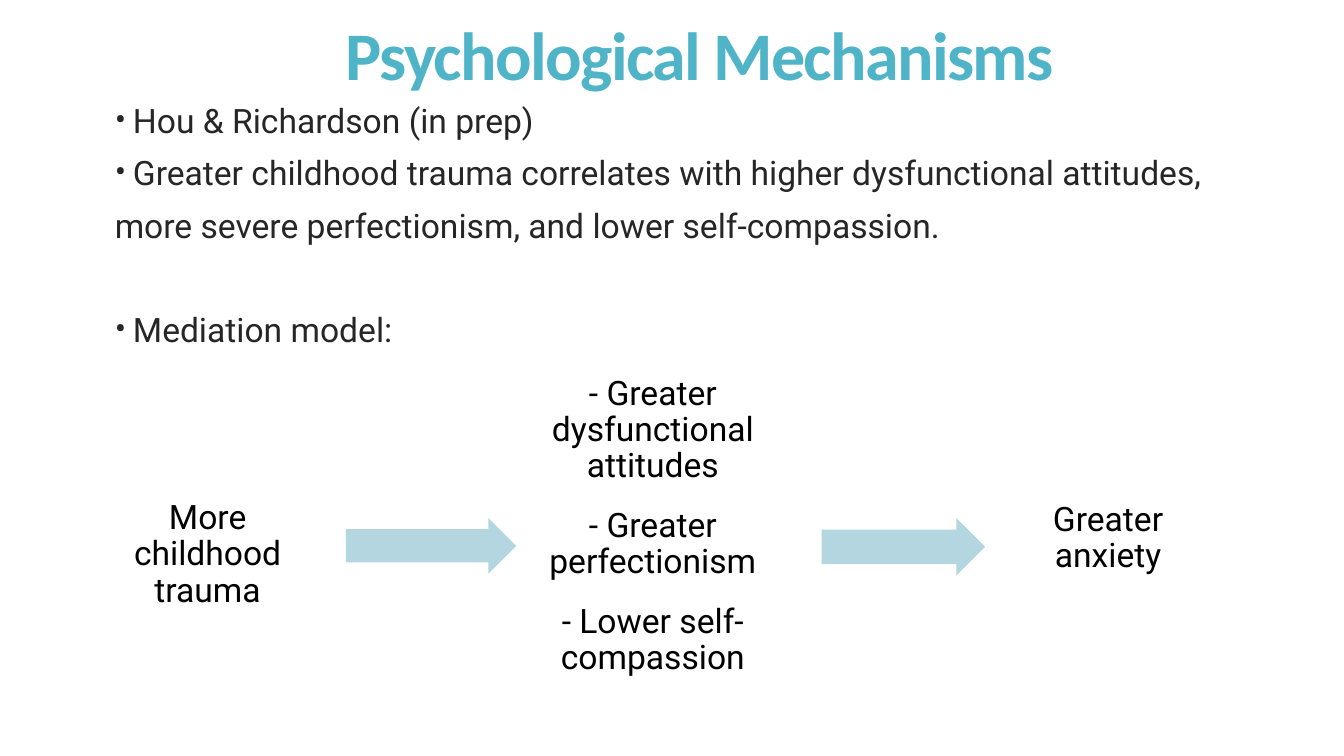
from dataclasses import dataclass

from lxml.etree import SubElement
from pptx import Presentation
from pptx.dml.color import RGBColor
from pptx.enum.shapes import MSO_SHAPE
from pptx.enum.text import MSO_ANCHOR, MSO_AUTO_SIZE, PP_ALIGN
from pptx.oxml.ns import qn
from pptx.util import Inches, Pt


@dataclass(frozen=True)
class Theme:
    accent: RGBColor = RGBColor(0x50, 0xB4, 0xC8)
    arrow: RGBColor = RGBColor(0xB3, 0xD6, 0xE0)
    body: RGBColor = RGBColor(0x26, 0x26, 0x26)
    label: RGBColor = RGBColor(0, 0, 0)
    title_font: str = "Calibri"
    text_font: str = "Roboto"
    title_size: Pt = Pt(48.6)
    text_size: Pt = Pt(24)


THEME = Theme()

FINDINGS = [
    ("Hou & Richardson (in prep)", True, 0),
    ("Greater childhood trauma correlates with higher dysfunctional attitudes,", True, 13),
    ("more severe perfectionism, and lower self-compassion.", False, 13),
    ("Mediation model:", True, 50),
]

STAGES = [
    ((1.08, 4.91, 1.96, 1.19), ["More childhood trauma"]),
    ((4.92, 4.19, 3.11, 2.07), [
        "- Greater dysfunctional attitudes",
        "- Greater perfectionism",
        "- Lower self-compassion",
    ]),
    ((9.9, 4.98, 2.18, 0.72), ["Greater anxiety"]),
]

ARROWS = [(3.43, 5.14, 1.69, 0.55), (8.15, 5.14, 1.62, 0.57)]


def set_attrs(obj, values):
    for name, value in values.items():
        setattr(obj, name, value)


def to_inches(box):
    return [Inches(v) for v in box]


def write_paragraph(p, text, color, **para_format):
    set_attrs(p, para_format)
    r = p.add_run()
    r.text = text
    set_attrs(r.font, {"name": THEME.text_font, "size": THEME.text_size})
    r.font.color.rgb = color


def paragraphs(tf, count):
    return [tf.paragraphs[0]] + [tf.add_paragraph() for _ in range(count - 1)]


def add_bullet(p):
    pPr = p._p.get_or_add_pPr()
    indent = Inches(0.18)
    pPr.set("marL", str(indent))
    pPr.set("indent", str(-indent))
    SubElement(pPr, qn("a:buFont")).set("typeface", THEME.text_font)
    SubElement(pPr, qn("a:buChar")).set("char", "•")


def format_title(sp, text, box):
    set_attrs(sp, dict(zip(("left", "top", "width", "height"), to_inches(box))))
    tf = sp.text_frame
    tf.text = text
    set_attrs(tf, {"auto_size": MSO_AUTO_SIZE.NONE, "vertical_anchor": MSO_ANCHOR.MIDDLE})
    p = tf.paragraphs[0]
    set_attrs(p, {"alignment": PP_ALIGN.CENTER, "line_spacing": 0.85})
    r = p.runs[0]
    set_attrs(r.font, {"name": THEME.title_font, "size": THEME.title_size, "bold": True})
    r.font.color.rgb = THEME.accent
    r._r.get_or_add_rPr().set("spc", "-120")


def add_findings(s, box):
    tf = s.shapes.add_textbox(*to_inches(box)).text_frame
    tf.word_wrap = True
    for p, (text, bulleted, before) in zip(paragraphs(tf, len(FINDINGS)), FINDINGS):
        write_paragraph(p, text, THEME.body, line_spacing=0.85, space_before=Pt(before))
        if bulleted:
            add_bullet(p)


def add_stage(s, box, lines):
    tf = s.shapes.add_textbox(*to_inches(box)).text_frame
    set_attrs(tf, {"word_wrap": True, "vertical_anchor": MSO_ANCHOR.MIDDLE})
    sides = ("left", "top", "right", "bottom")
    set_attrs(tf, {f"margin_{side}": Inches(0.17) for side in sides})
    for p, text in zip(paragraphs(tf, len(lines)), lines):
        write_paragraph(p, text, THEME.label, alignment=PP_ALIGN.CENTER,
                        line_spacing=0.9, space_after=Pt(16.8))


def add_arrow(s, box):
    sp = s.shapes.add_shape(MSO_SHAPE.RIGHT_ARROW, *to_inches(box))
    sp.adjustments[0] = 0.6
    sp.adjustments[1] = 0.5
    sp.shadow.inherit = False
    sp.fill.solid()
    sp.fill.fore_color.rgb = THEME.arrow
    sp.line.fill.background()


def main():
    prs = Presentation()
    set_attrs(prs, {"slide_width": Inches(13.33), "slide_height": Inches(7.5)})
    s = prs.slides.add_slide(prs.slide_layouts[5])
    format_title(s.shapes.title, "Psychological Mechanisms", (1.23, 0.44, 11.42, 0.3))
    add_findings(s, (1.04, 1, 11.34, 6.09))
    for box, lines in STAGES:
        add_stage(s, box, lines)
    for box in ARROWS:
        add_arrow(s, box)
    prs.save("out.pptx")


if __name__ == "__main__":
    main()
